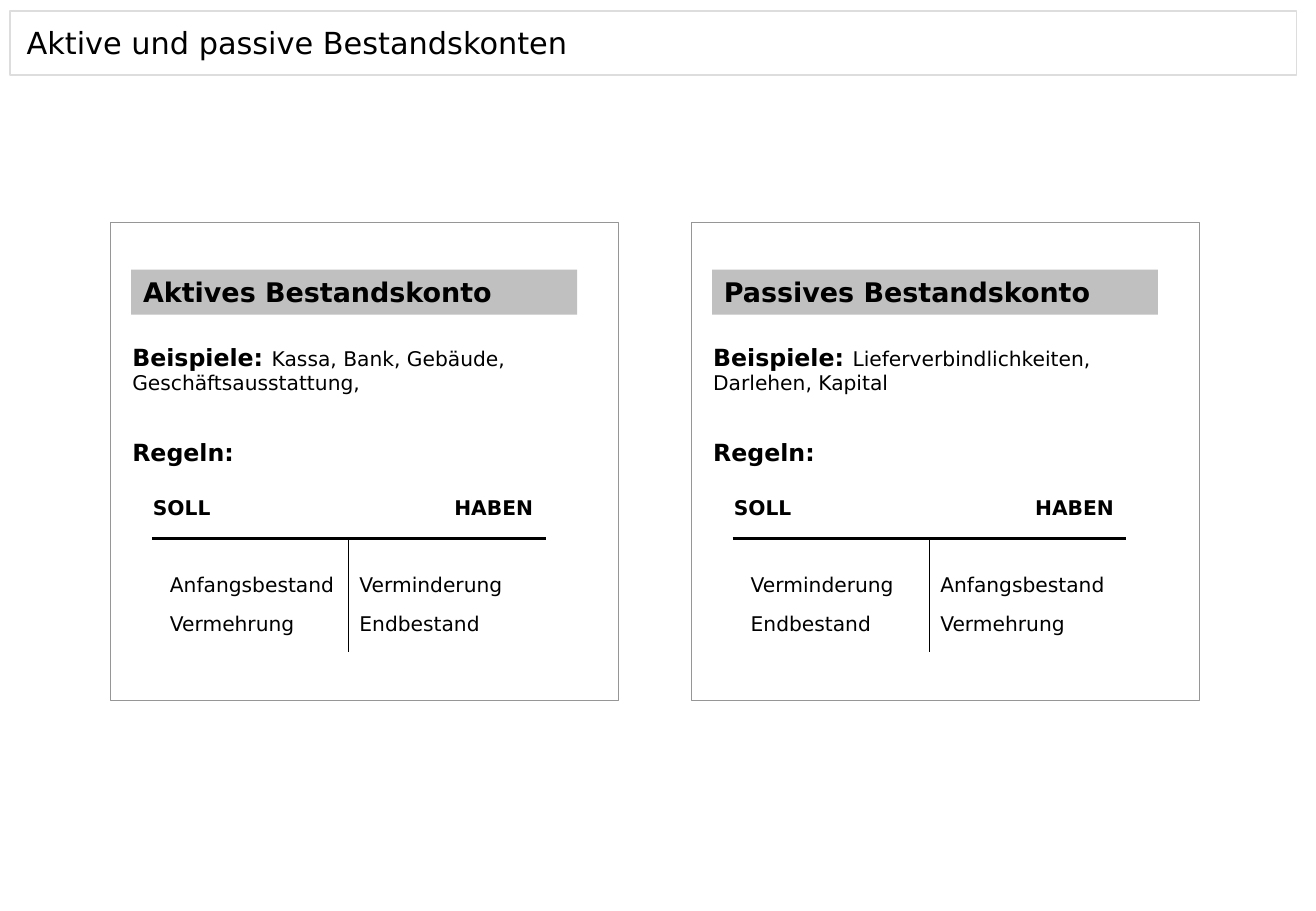
import pptx
import pptx.dml.color
import pptx.enum.shapes
import pptx.enum.text
import pptx.oxml.ns
import pptx.util
from lxml import etree

BLACK = pptx.dml.color.RGBColor(0x00, 0x00, 0x00)
WHITE = pptx.dml.color.RGBColor(0xFF, 0xFF, 0xFF)
BANNER_GREY = pptx.dml.color.RGBColor(0xC0, 0xC0, 0xC0)
CARD_EDGE = pptx.dml.color.RGBColor(0x96, 0x96, 0x96)
TITLE_EDGE = pptx.dml.color.RGBColor(0xDD, 0xDD, 0xDD)
FONT = "DejaVu Sans"
COLUMNS, ROWS = 1083, 750
CELL = pptx.util.Inches(0.01)
CARD_TOP, CARD_WIDTH, CARD_HEIGHT = 183, 418, 394
CARD_LEFT, CARD_PITCH = 91, 478
TAB_COLUMN = 156

ACCOUNTS = [
    {
        "heading": "Aktives Bestandskonto",
        "examples": "Kassa, Bank, Gebäude, Geschäftsausstattung,",
        "entries": [("Anfangsbestand", "Verminderung"), ("Vermehrung", "Endbestand")],
    },
    {
        "heading": "Passives Bestandskonto",
        "examples": "Lieferverbindlichkeiten, Darlehen, Kapital",
        "entries": [("Verminderung", "Anfangsbestand"), ("Endbestand", "Vermehrung")],
    },
]


def cells(*counts):
    """Convert grid counts to slide lengths."""
    return [count * CELL for count in counts]


def write(frame, pieces, wrap=True):
    """Write (text, size, bold) pieces as one left-aligned paragraph."""
    layout = {
        "word_wrap": wrap,
        "vertical_anchor": pptx.enum.text.MSO_ANCHOR.TOP,
    }
    for name, value in layout.items():
        setattr(frame, name, value)
    paragraph = frame.paragraphs[0]
    paragraph.alignment = pptx.enum.text.PP_ALIGN.LEFT
    for text, size, bold in pieces:
        run = paragraph.add_run()
        run.text = text
        style = {"name": FONT, "size": pptx.util.Pt(size), "bold": bold}
        for name, value in style.items():
            setattr(run.font, name, value)
        run.font.color.rgb = BLACK
    return paragraph


def add_panel(slide, box, fill=None, edge=None, edge_width=0.75):
    """Draw a flat rectangle with optional fill and edge."""
    panel = slide.shapes.add_shape(
        pptx.enum.shapes.MSO_SHAPE.RECTANGLE, *cells(*box))
    panel.shadow.inherit = False
    if fill is None:
        panel.fill.background()
    else:
        panel.fill.solid()
        panel.fill.fore_color.rgb = fill
    if edge is None:
        panel.line.fill.background()
    else:
        panel.line.color.rgb = edge
        panel.line.width = pptx.util.Pt(edge_width)
    return panel


def add_text(slide, box, pieces, wrap=True):
    """Place a text box on the grid."""
    write(slide.shapes.add_textbox(*cells(*box)).text_frame, pieces, wrap)


def add_rule(slide, ends, width):
    """Draw a black straight line without shadow."""
    rule = slide.shapes.add_connector(
        pptx.enum.shapes.MSO_CONNECTOR.STRAIGHT, *cells(*ends))
    rule.line.color.rgb = BLACK
    rule.line.width = pptx.util.Pt(width)
    etree.SubElement(rule._element.spPr, pptx.oxml.ns.qn("a:effectLst"))


def add_title(slide, box, title):
    """Draw the framed slide title."""
    left, top, _, _ = box
    add_panel(slide, box, edge=TITLE_EDGE, edge_width=1)
    add_text(slide, (left + 4, top + 6, 466, 40), [(title, 18, False)], wrap=False)


def add_t_account(slide, box, entries):
    """Draw the T-account with its sides and entry rows."""
    left, top, width, height = box
    middle, bar = left + width // 2, top + 40
    add_rule(slide, (left, bar, left + width, bar), 1.75)
    for side, offset, side_width in (("SOLL", -9, 122), ("HABEN", 239, 102)):
        label = add_panel(slide, (left + offset, top, side_width, 38), WHITE)
        write(label.text_frame, [(side, 12, True)])
    for index, entry in enumerate(entries):
        row = add_panel(slide, (left + 5, top + 63 + 32 * index, 350, 39), WHITE)
        paragraph = write(row.text_frame, [("\t".join(entry), 12, False)])
        tabs = etree.SubElement(
            paragraph._p.get_or_add_pPr(), pptx.oxml.ns.qn("a:tabLst"))
        etree.SubElement(tabs, pptx.oxml.ns.qn("a:tab"),
                         pos=str(TAB_COLUMN * CELL), algn="l")
    add_rule(slide, (middle, bar, middle, top + height), 0.75)


def add_account_card(slide, box, account):
    """Draw one account card with heading, examples and rules."""
    left, top, _, _ = box
    add_panel(slide, box, WHITE, CARD_EDGE)
    add_t_account(slide, (left + 34, top + 220, 324, 134), account["entries"])
    banner = add_panel(slide, (left + 17, top + 39, 367, 37), BANNER_GREY)
    write(banner.text_frame, [(account["heading"], 16, True)])
    add_text(slide, (left + 8, top + 94, 392, 53),
             [("Beispiele: ", 14, True), (account["examples"], 12, False)])
    add_text(slide, (left + 8, top + 173, 392, 33), [("Regeln:", 14, True)])


def main():
    """Build and save the slide."""
    deck = pptx.Presentation()
    deck.slide_width, deck.slide_height = cells(COLUMNS, ROWS)
    slide = deck.slides.add_slide(deck.slide_layouts[6])
    add_title(slide, (8, 9, 1059, 53), "Aktive und passive Bestandskonten")
    for index, account in enumerate(ACCOUNTS):
        left = CARD_LEFT + CARD_PITCH * index
        add_account_card(slide, (left, CARD_TOP, CARD_WIDTH, CARD_HEIGHT), account)
    deck.save("out.pptx")


if __name__ == "__main__":
    main()
